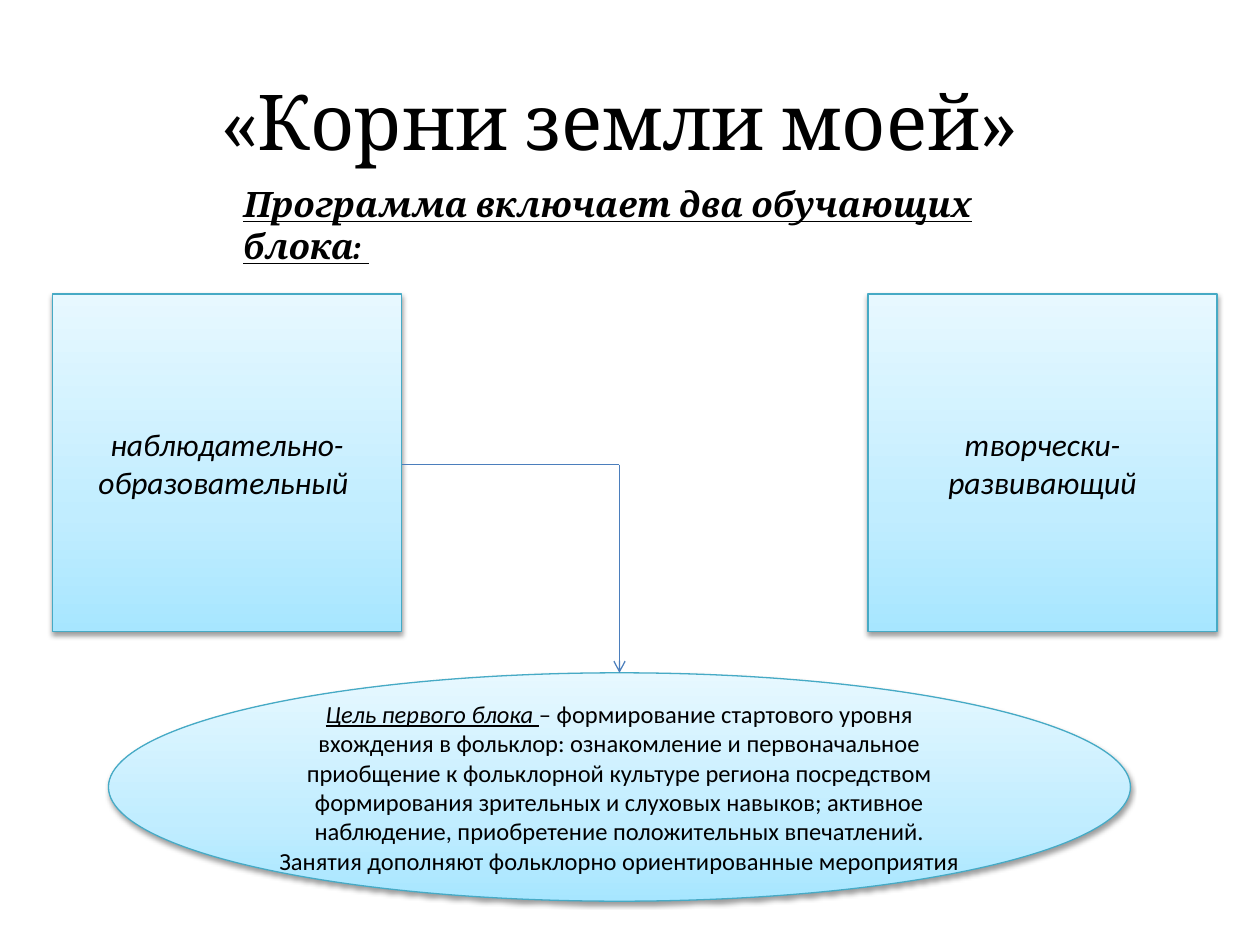
from lxml.etree import SubElement
from pptx import Presentation
from pptx.dml.color import RGBColor
from pptx.enum.shapes import MSO_CONNECTOR as CONNECTOR, MSO_SHAPE as SHAPE
from pptx.enum.text import MSO_ANCHOR as ANCHOR, PP_ALIGN as ALIGN
from pptx.oxml.ns import qn
from pptx.util import Pt

BLACK = RGBColor(0x00, 0x00, 0x00)
BORDER = RGBColor(0x46, 0xAA, 0xC5)
ARROW = RGBColor(0x4B, 0x7E, 0xBC)
GRADIENT = (
    (0, RGBColor(0xA7, 0xE6, 0xFF)),
    (35, RGBColor(0xC1, 0xED, 0xFF)),
    (100, RGBColor(0xE7, 0xF8, 0xFF)),
)
BLOCK_TOP, BLOCK_WIDTH, BLOCK_HEIGHT = 168, 199.5, 193
BLOCKS = ((30, "наблюдательно-образовательный "), (496, "творчески-развивающий"))
GOAL_LEFT, GOAL_TOP, GOAL_WIDTH, GOAL_HEIGHT = 62, 384.5, 584, 130.5
GOAL_LABEL = "Цель первого блока "
GOAL_TEXT = (
    "– формирование стартового уровня вхождения в фольклор: ознакомление и "
    "первоначальное приобщение к фольклорной культуре региона посредством "
    "формирования зрительных и слуховых навыков; активное наблюдение, "
    "приобретение положительных впечатлений. Занятия дополняют фольклорно "
    "ориентированные мероприятия"
)


def set_font(font, name, size, **styles):
    """Apply typeface, size, black colour and any styles to a font."""
    font.name, font.size = name, Pt(size)
    font.color.rgb = BLACK
    for style, value in styles.items():
        setattr(font, style, value)


def add_color(parent, color):
    """Add a solid colour element to an XML parent and return it."""
    return SubElement(parent, qn("a:srgbClr"), val=str(color))


def add_gradient(panel):
    """Fill a panel with the vertical three-stop gradient."""
    panel.fill.gradient()
    panel.fill.gradient_angle = 90
    stops = panel.element.spPr.find(".//" + qn("a:gsLst"))
    for stop in list(stops):
        stops.remove(stop)
    for percent, color in GRADIENT:
        add_color(SubElement(stops, qn("a:gs"), pos=str(percent * 1000)), color)


def add_shadow(panel):
    """Give a panel a soft shadow that falls straight down."""
    panel.shadow.inherit = False
    effects = panel.element.spPr.find(qn("a:effectLst"))
    shadow = SubElement(effects, qn("a:outerShdw"), blurRad=str(Pt(3.1)),
                        dist=str(Pt(1.6)), dir="5400000", rotWithShape="0")
    SubElement(add_color(shadow, BLACK), qn("a:alpha"), val="38000")


def add_panel(slide, outline, left, top, width, height):
    """Add a shaded panel and return its centred paragraph."""
    panel = slide.shapes.add_shape(outline, Pt(left), Pt(top), Pt(width), Pt(height))
    add_gradient(panel)
    panel.line.color.rgb, panel.line.width = BORDER, Pt(0.75)
    add_shadow(panel)
    panel.text_frame.word_wrap = True
    panel.text_frame.vertical_anchor = ANCHOR.MIDDLE
    paragraph = panel.text_frame.paragraphs[0]
    paragraph.alignment = ALIGN.CENTER
    return paragraph


def add_line(slide, start, end, arrow=False):
    """Draw a straight line, optionally ending in an open arrowhead."""
    line = slide.shapes.add_connector(CONNECTOR.STRAIGHT, *map(Pt, start + end))
    line.line.color.rgb, line.line.width = ARROW, Pt(0.75)
    if arrow:
        SubElement(line.line._get_or_add_ln(), qn("a:tailEnd"), type="arrow")
    SubElement(line.element.spPr, qn("a:effectLst"))


def add_title(slide, text):
    """Place and format the slide title."""
    title = slide.shapes.title
    title.left, title.top, title.width, title.height = map(Pt, (30, 32, 648, 73))
    title.text_frame.text = text
    heading = title.text_frame.paragraphs[0]
    heading.alignment = ALIGN.CENTER
    set_font(heading.font, "Cambria", 44)


def add_subtitle(slide, text):
    """Add the underlined line below the title."""
    box = slide.shapes.add_textbox(*map(Pt, (132, 101, 453.5, 31.5)))
    box.text_frame.word_wrap = True
    subtitle = box.text_frame.paragraphs[0]
    subtitle.text = text
    set_font(subtitle.font, "Cambria", 20, bold=True, italic=True, underline=True)


def add_goal(slide):
    """Add the ellipse that states the goal of the first block."""
    goal = add_panel(slide, SHAPE.OVAL, GOAL_LEFT, GOAL_TOP, GOAL_WIDTH, GOAL_HEIGHT)
    for text, emphasis in ((GOAL_LABEL, True), (GOAL_TEXT, False)):
        run = goal.add_run()
        run.text = text
        set_font(run.font, "Calibri", 14, italic=emphasis, underline=emphasis)


def main():
    """Build the slide and save it."""
    deck = Presentation()
    deck.slide_width, deck.slide_height = Pt(720), Pt(540)
    slide = deck.slides.add_slide(deck.slide_layouts.get_by_name("Title Only"))
    add_title(slide, "«Корни земли моей»")
    add_subtitle(slide, "Программа включает два обучающих блока: ")
    for left, name in BLOCKS:
        block = add_panel(slide, SHAPE.RECTANGLE, left, BLOCK_TOP, BLOCK_WIDTH, BLOCK_HEIGHT)
        block.text = name
        set_font(block.font, "Calibri", 18, italic=True)
    add_goal(slide)
    block_edge = (BLOCKS[0][0] + BLOCK_WIDTH, 265.5)
    corner = (GOAL_LEFT + GOAL_WIDTH / 2, 265.5)
    add_line(slide, block_edge, corner)
    add_line(slide, corner, (corner[0], GOAL_TOP), arrow=True)
    deck.save("out.pptx")


if __name__ == "__main__":
    main()
